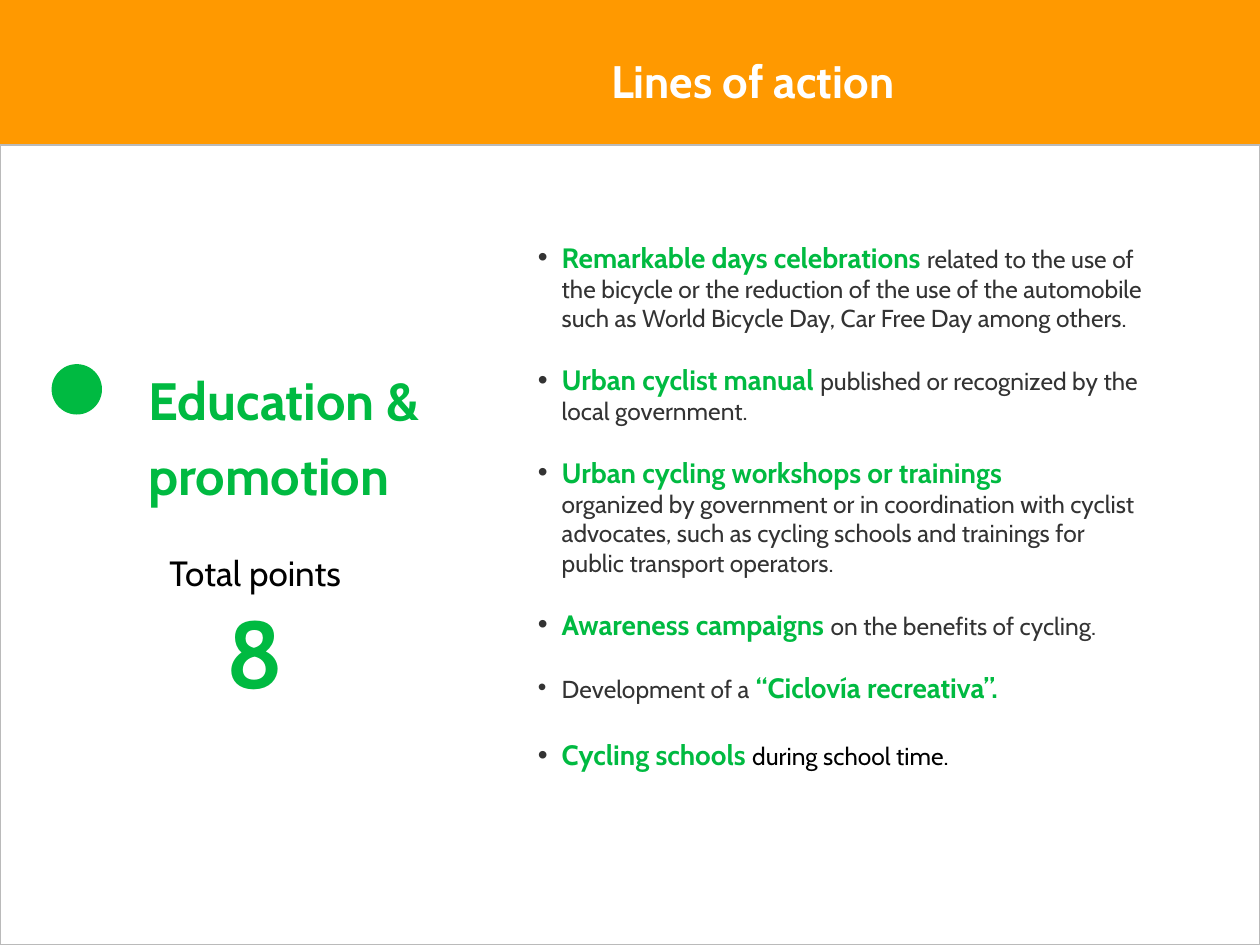
from dataclasses import dataclass

import pptx
import pptx.dml.color
import pptx.enum.shapes
import pptx.enum.text
import pptx.oxml.ns
import pptx.util
from lxml import etree

Inches, Pt = pptx.util.Inches, pptx.util.Pt
Shape = pptx.enum.shapes.MSO_SHAPE
Align = pptx.enum.text.PP_ALIGN

WIDTH, HEIGHT = 10, 7.5
HEADER = 1.15
FONT = "Cabin"
COLORS = {
    "orange": "FF9900",
    "green": "00BA41",
    "white": "FFFFFF",
    "border": "BABABA",
    "body": "333333",
    "black": "000000",
}


@dataclass(frozen=True)
class Area:
    left: float
    top: float
    width: float
    height: float

    def lengths(self) -> list:
        return [Inches(n) for n in (self.left, self.top, self.width, self.height)]


@dataclass(frozen=True)
class Span:
    text: str
    size: int
    color: str
    bold: bool = False


@dataclass(frozen=True)
class Action:
    spans: tuple[Span, ...]
    gap: float = 17


def key(text: str) -> Span:
    return Span(text, 16, "green", True)


def plain(text: str, color: str = "body") -> Span:
    return Span(text, 14, color)


ACTIONS = (
    Action((key("Remarkable days celebrations "),
            plain("related to the use of the bicycle or the reduction of the use of "
                  "the automobile such as World Bicycle Day, Car Free Day among others."))),
    Action((key("Urban cyclist manual "),
            plain("published or recognized by the local government."))),
    Action((key("Urban cycling workshops or trainings\v"),
            plain("organized by government or in coordination with cyclist advocates, "
                  "such as cycling schools and trainings for public transport operators."))),
    Action((key("Awareness campaigns "), plain("on the benefits of cycling."))),
    Action((plain("Development of a"), key(" “Ciclovía recreativa”.")), gap=19.4),
    Action((key("Cycling schools "), plain("during school time.", "black")), gap=0),
)


def rgb(name: str) -> pptx.dml.color.RGBColor:
    return pptx.dml.color.RGBColor.from_string(COLORS[name])


def add_filled(page, kind, area: Area, fill: str, border: str | None = None) -> None:
    shape = page.shapes.add_shape(kind, *area.lengths())
    shape.shadow.inherit = False
    shape.fill.solid()
    shape.fill.fore_color.rgb = rgb(fill)
    if border:
        shape.line.color.rgb = rgb(border)
        shape.line.width = Pt(1)
    else:
        shape.line.fill.background()


def add_box(page, area: Area, inset: float = 0.05):
    frame = page.shapes.add_textbox(*area.lengths()).text_frame
    frame.word_wrap = True
    frame.margin_top = frame.margin_bottom = Inches(inset)
    return frame


def style(font, span: Span) -> None:
    font.size, font.bold = Pt(span.size), span.bold
    font.color.rgb = rgb(span.color)


def next_paragraph(frame, index: int):
    return frame.add_paragraph() if index else frame.paragraphs[0]


def add_lines(page, area: Area, lines: tuple[Span, ...], align=Align.CENTER,
              spacing: float = 1.0, inset: float = 0.05) -> None:
    """Add a text box with one uniformly styled paragraph per span."""
    frame = add_box(page, area, inset)
    for index, span in enumerate(lines):
        para = next_paragraph(frame, index)
        para.text = span.text
        para.alignment, para.line_spacing = align, spacing
        para.font.name = FONT
        style(para.font, span)


def add_bullet(para, color: str, indent: float = 0.19) -> None:
    properties = para._p.get_or_add_pPr()
    properties.set("marL", str(Inches(indent)))
    properties.set("indent", str(-Inches(indent)))
    qn = pptx.oxml.ns.qn
    tint = etree.SubElement(properties, qn("a:buClr"))
    etree.SubElement(tint, qn("a:srgbClr"), val=COLORS[color])
    etree.SubElement(properties, qn("a:buFont"), typeface="Arial")
    etree.SubElement(properties, qn("a:buChar"), char="•")


def add_actions(page, area: Area, actions: tuple[Action, ...]) -> None:
    frame = add_box(page, area)
    for index, action in enumerate(actions):
        para = next_paragraph(frame, index)
        add_bullet(para, "body")
        para.space_after = Pt(action.gap)
        para.font.name = FONT
        for span in action.spans:
            run = para.add_run()
            run.text = span.text.rstrip("\v")
            style(run.font, span)
            if span.text.endswith("\v"):
                para.add_line_break()


def main() -> None:
    deck = pptx.Presentation()
    deck.slide_width, deck.slide_height = Inches(WIDTH), Inches(HEIGHT)
    page = deck.slides.add_slide(deck.slide_layouts[6])

    add_filled(page, Shape.RECTANGLE, Area(0, 0, WIDTH, HEIGHT), "orange")
    add_filled(page, Shape.RECTANGLE, Area(0, HEADER, WIDTH, HEIGHT - HEADER),
               "white", "border")
    add_actions(page, Area(4.17, 1.86, 5, 4.7), ACTIONS)
    add_lines(page, Area(1.08, 2.72, 2.95, 1.24),
              (Span("Education & promotion", 30, "green", True),),
              Align.LEFT, spacing=1.2, inset=0.1)
    add_lines(page, Area(0.89, 4.33, 2.27, 1.35),
              (Span("Total points", 20, "black"), Span("8", 54, "green", True)))
    add_lines(page, Area(1.95, 0.37, WIDTH - 1.95, 0.54),
              (Span("Lines of action", 26, "white", True),))
    add_filled(page, Shape.OVAL, Area(0.41, 2.89, 0.4, 0.4), "green")

    deck.save("out.pptx")


if __name__ == "__main__":
    main()
